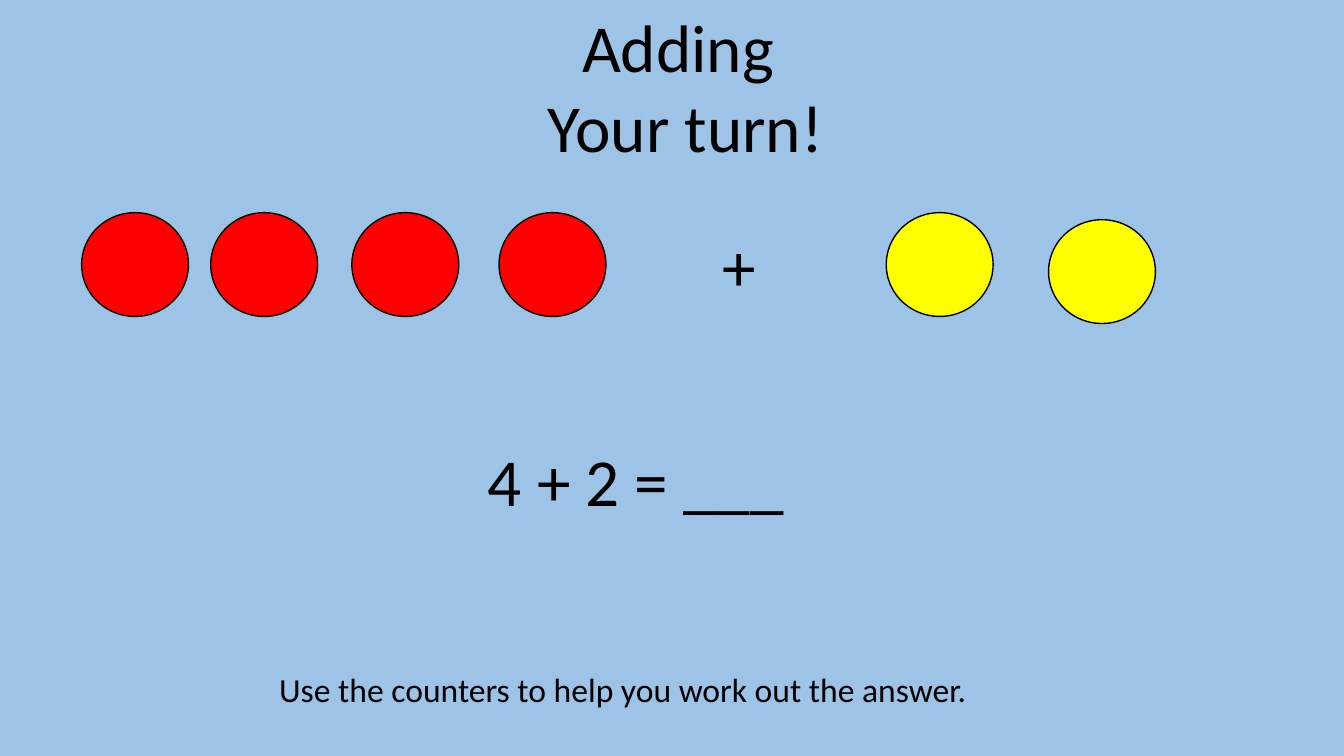
from pptx import Presentation
from pptx.dml.color import RGBColor
from pptx.enum.shapes import MSO_SHAPE
from pptx.enum.text import MSO_AUTO_SIZE, PP_ALIGN
from pptx.util import Inches, Pt

SLIDE_WIDTH, SLIDE_HEIGHT = 13.33, 7.5
COUNTER_WIDTH, COUNTER_HEIGHT = 1.06, 1.03
BLACK, RED, YELLOW, SKY = "000000", "FF0000", "FFFF00", "9DC3E6"


def paint(fill, color):
    fill.solid()
    fill.fore_color.rgb = RGBColor.from_string(color)


def add_text(slide, box, lines, size, align=PP_ALIGN.LEFT):
    frame = slide.shapes.add_textbox(*map(Inches, box)).text_frame
    frame.word_wrap = True
    frame.auto_size = MSO_AUTO_SIZE.SHAPE_TO_FIT_TEXT
    for index, line in enumerate(lines):
        paragraph = frame.add_paragraph() if index else frame.paragraphs[0]
        paragraph.alignment = align
        run = paragraph.add_run()
        run.text = line
        run.font.name = "Calibri"
        run.font.size = Pt(size)
        paint(run.font.fill, BLACK)


def add_counters(slide, left, top, offsets, color):
    for across, down in offsets:
        counter = slide.shapes.add_shape(
            MSO_SHAPE.OVAL, Inches(left + across), Inches(top + down),
            Inches(COUNTER_WIDTH), Inches(COUNTER_HEIGHT))
        counter.shadow.inherit = False
        paint(counter.fill, color)
        paint(counter.line.fill, BLACK)
        counter.line.width = Pt(1)


def add_sum_picture(slide, left, top):
    add_counters(slide, left, top, [(0, 0), (1.28, 0), (2.68, 0), (4.14, 0)], RED)
    add_text(slide, (left + 6.26, top + 0.07, 1.72, 0.91), ["+"], 48)
    add_counters(slide, left + 7.98, top, [(0, 0), (1.61, 0.07)], YELLOW)


def build_adding_slide(presentation):
    slide = presentation.slides.add_slide(presentation.slide_layouts[6])
    paint(slide.background.fill, SKY)
    add_text(slide, (1.23, 0, 11.14, 1.72), ["Adding ", "Your turn!"], 48, PP_ALIGN.CENTER)
    add_sum_picture(slide, 0.81, 2.11)
    add_text(slide, (4.74, 4.31, 3.86, 0.91), ["4 + 2 = ___"], 48)
    add_text(slide, (2.67, 6.59, 8.79, 0.5),
             ["Use the counters to help you work out the answer."], 24)


def main():
    presentation = Presentation()
    presentation.slide_width = Inches(SLIDE_WIDTH)
    presentation.slide_height = Inches(SLIDE_HEIGHT)
    build_adding_slide(presentation)
    presentation.save("out.pptx")


if __name__ == "__main__":
    main()
